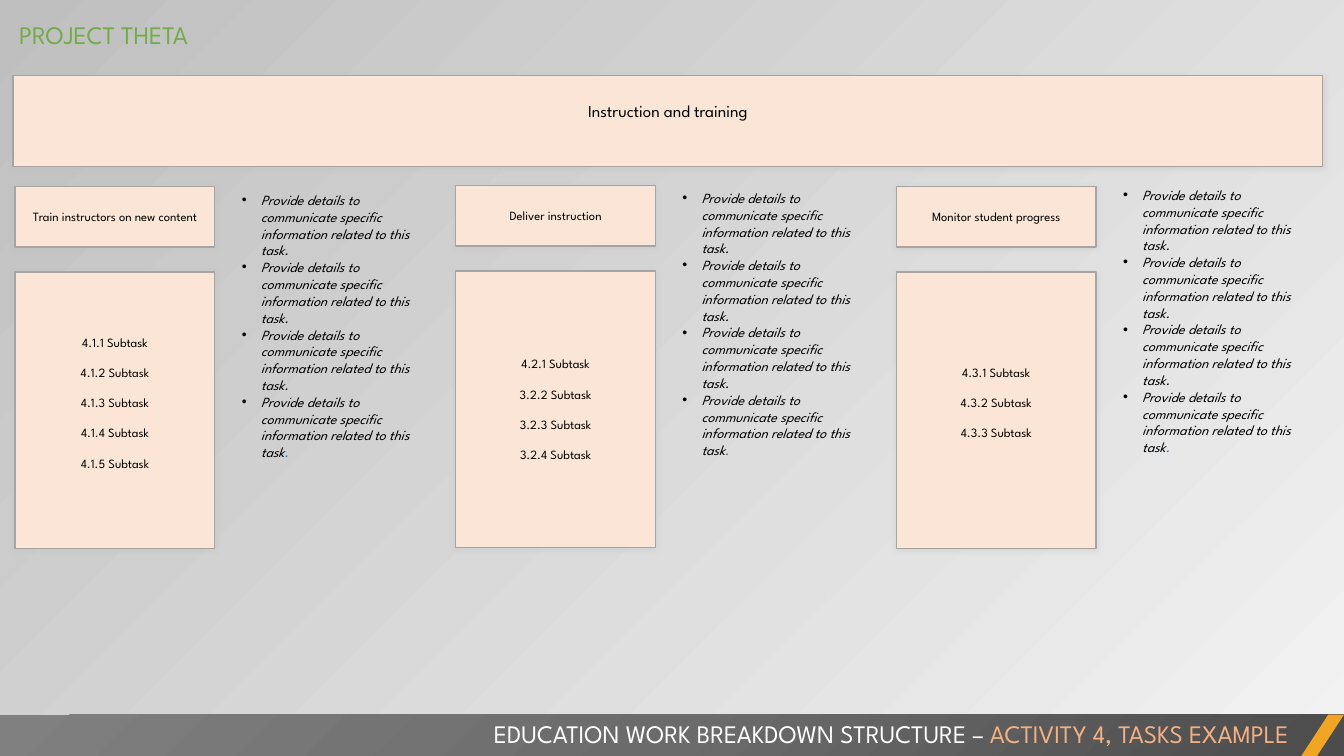
from dataclasses import dataclass

from pptx import Presentation
from pptx.dml.color import RGBColor
from pptx.enum.shapes import MSO_SHAPE
from pptx.enum.text import MSO_ANCHOR, MSO_AUTO_SIZE, PP_ALIGN
from pptx.oxml import parse_xml
from pptx.oxml.ns import nsdecls
from pptx.util import Inches, Pt


@dataclass(frozen=True)
class Theme:
    font: str = "League Spartan"
    black: str = "000000"
    white: str = "FFFFFF"
    green: str = "70AD47"
    peach: str = "FBE5D6"
    coral: str = "F4B183"
    amber: str = "F0A622"
    blue: str = "2E75B6"
    edge: str = "A5A5A5"
    shade: str = "BFBFBF"
    pale: str = "F2F2F2"
    bar: tuple = ("4C4C4C", "6B6B6B", "808080")
    head: int = 18
    lead: int = 12
    note: int = 10
    task: int = 9


T = Theme()
DETAIL = "Provide details to communicate specific information related to this task"
COLUMNS = [
    ("Train instructors on new content", 1.85, 1.85, 0.15,
     ["4.1.1", "4.1.2", "4.1.3", "4.1.4", "4.1.5"]),
    ("Deliver instruction", 1.84, 1.83, 0,
     ["4.2.1", "3.2.2", "3.2.3", "3.2.4"]),
    ("Monitor student progress", 1.85, 1.8, 0.15,
     ["4.3.1", "4.3.2", "4.3.3"]),
]


def rgb(code):
    return RGBColor.from_string(code)


def write(shape, lines, size, color=T.black, align=PP_ALIGN.LEFT,
          anchor=MSO_ANCHOR.TOP, fit=MSO_AUTO_SIZE.NONE, italic=False,
          gap=0, pad=0, bullet=False):
    frame = shape.text_frame
    frame.word_wrap = True
    frame.auto_size = fit
    frame.vertical_anchor = anchor
    frame.margin_left = frame.margin_right = Inches(0.1)
    frame.margin_top = Inches(0.05)
    frame.margin_bottom = Inches(0.05 + pad)
    for i, line in enumerate(lines):
        para = frame.add_paragraph() if i else frame.paragraphs[0]
        para.alignment = align
        para.space_before = Pt(gap if i else 0)
        for words, tint in [(line, color)] if isinstance(line, str) else line:
            run = para.add_run()
            run.text = words
            font = run.font
            font.name, font.size, font.italic = T.font, Pt(size), italic
            font.color.rgb = rgb(tint)
        if bullet:
            props = para._p.get_or_add_pPr()
            props.set("marL", str(Inches(0.19)))
            props.set("indent", str(Inches(-0.19)))
            props.append(parse_xml(f'<a:buFont {nsdecls("a")} typeface="Arial"/>'))
            props.append(parse_xml(f'<a:buChar {nsdecls("a")} char="•"/>'))


def place(box):
    return [Inches(n) for n in box]


def plain(slide, kind, box, color):
    shape = slide.shapes.add_shape(kind, *place(box))
    shape.shadow.inherit = False
    shape.fill.solid()
    shape.fill.fore_color.rgb = rgb(color)
    shape.line.fill.background()
    return shape


def card(slide, box, lines, size, **form):
    shape = plain(slide, MSO_SHAPE.RECTANGLE, box, T.peach)
    shape.line.color.rgb = rgb(T.edge)
    shape.line.width = Pt(1)
    glow = parse_xml(
        f'<a:outerShdw {nsdecls("a")} blurRad="{Pt(4)}" dist="{Pt(1)}" '
        f'dir="5400000" algn="t" rotWithShape="0"><a:srgbClr val="{T.shade}">'
        '<a:alpha val="40000"/></a:srgbClr></a:outerShdw>')
    shape._element.spPr.find("{*}effectLst").append(glow)
    write(shape, lines, size, align=PP_ALIGN.CENTER,
          anchor=MSO_ANCHOR.MIDDLE, **form)


def label(slide, box, lines, size, **form):
    shape = slide.shapes.add_textbox(*place(box))
    write(shape, lines, size, fit=MSO_AUTO_SIZE.SHAPE_TO_FIT_TEXT, **form)


def backdrop(slide):
    fill = slide.background.fill
    fill.gradient()
    fill.gradient_angle = 135
    for stop, color in zip(fill.gradient_stops, (T.pale, T.shade)):
        stop.color.rgb = rgb(color)


def header(slide, box):
    title = slide.shapes.title
    title.left, title.top, title.width, title.height = place(box)
    write(title, ["PROJECT THETA"], T.head, color=T.green)


def footer(slide, box):
    left, top, width, height = box
    band = plain(slide, MSO_SHAPE.RECTANGLE, box, T.bar[0])
    stops = "".join(
        f'<a:gs pos="{i * 50000}"><a:srgbClr val="{color}"/></a:gs>'
        for i, color in enumerate(T.bar))
    solid = band._element.spPr.find("{*}solidFill")
    solid.getparent().replace(solid, parse_xml(
        f'<a:gradFill {nsdecls("a")} rotWithShape="1"><a:gsLst>{stops}</a:gsLst>'
        '<a:path path="circle"><a:fillToRect l="100000" t="100000"/></a:path>'
        '</a:gradFill>'))
    slash = plain(slide, MSO_SHAPE.PARALLELOGRAM,
                  (left + width - 0.43, top, 0.43, height), T.amber)
    slash.adjustments[0] = 0.652
    label(slide, (left + 1.66, top - 0.01, 11.22, 0.4),
          [[("EDUCATION WORK BREAKDOWN STRUCTURE – ", T.white),
            ("ACTIVITY 4, TASKS EXAMPLE", T.coral)]],
          T.head, align=PP_ALIGN.RIGHT)


def column(slide, left, name, top, side, pad, codes):
    card(slide, (left, top, 1.98, 0.6), [name], T.task)
    card(slide, (left, top + 0.85, 1.98, 2.74),
         [f"{code} Subtask" for code in codes], T.task, gap=10.8, pad=pad)
    last = [(DETAIL, T.black), (".", T.blue)]
    label(slide, (left + 2.15, side, 2.06, 3), [DETAIL + "."] * 3 + [last],
          T.note, italic=True, bullet=True)


def main():
    deck = Presentation()
    deck.slide_width, deck.slide_height = Inches(13.33), Inches(7.5)
    slide = deck.slides.add_slide(deck.slide_layouts[5])
    backdrop(slide)
    header(slide, (0.09, 0.14, 10.11, 0.4))
    card(slide, (0.13, 0.75, 12.99, 0.9), ["Instruction and training"],
         T.lead, pad=0.2)
    for i, parts in enumerate(COLUMNS):
        column(slide, 0.15 + 4.37 * i, *parts)
    footer(slide, (0, 7.09, 13.33, 0.42))
    deck.save("out.pptx")


if __name__ == "__main__":
    main()
